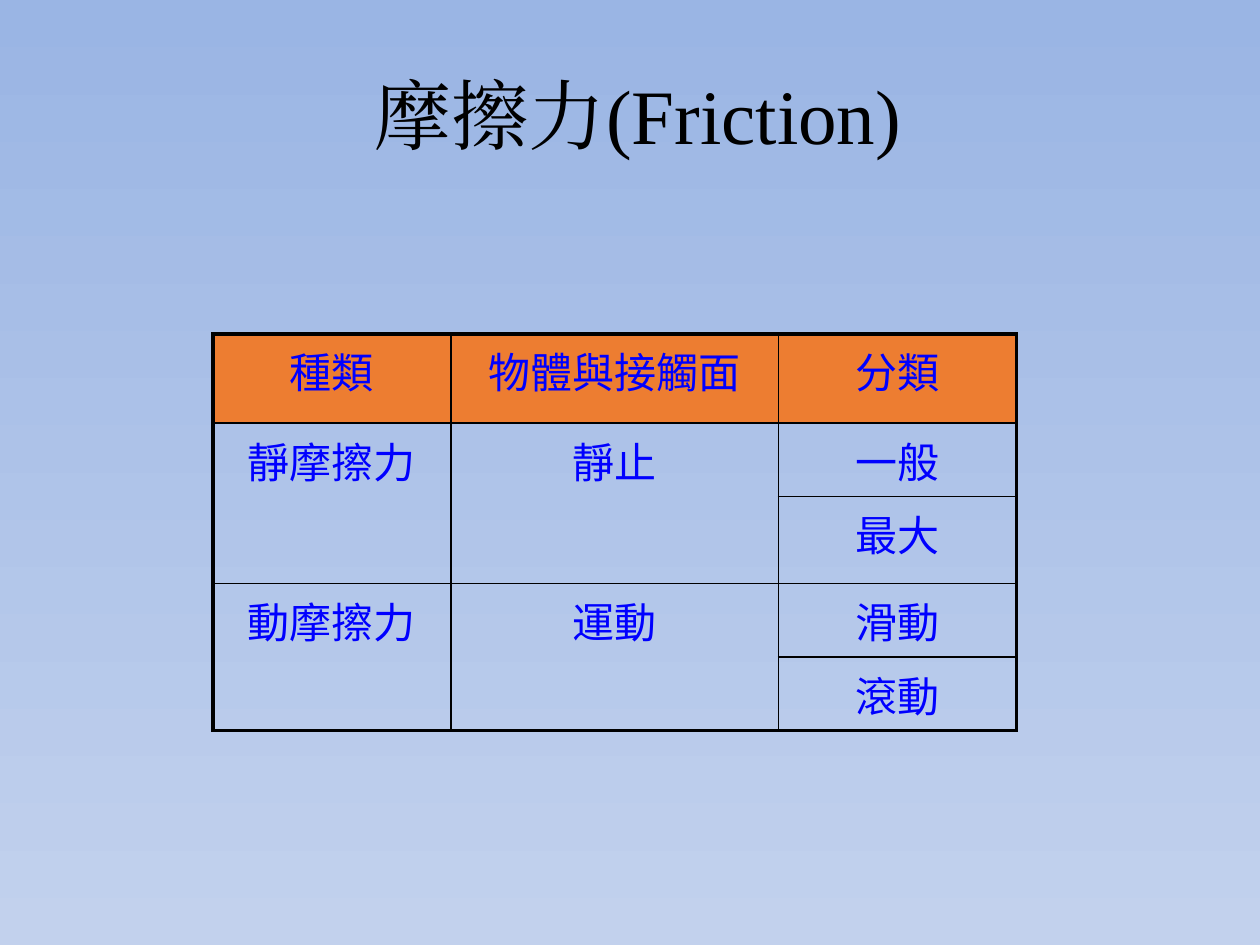
from lxml.etree import SubElement
from pptx import Presentation
from pptx.dml.color import RGBColor as RGB
from pptx.enum.text import MSO_ANCHOR as Anchor, PP_ALIGN as Align
from pptx.oxml import parse_xml
from pptx.oxml.ns import nsdecls, qn
from pptx.util import Cm, Pt

# Content: None continues the cell above
TITLE = "摩擦力(Friction) "
ROWS = [
    ("種類", "物體與接觸面", "分類"),
    ("靜摩擦力", "靜止", "一般"),
    (None, None, "最大"),
    ("動摩擦力", "運動", "滑動"),
    (None, None, "滾動"),
]

# Layout in cm
TITLE_BOX = {"left": 2.9, "top": 0.71, "width": 20.32, "height": 3.18}
TABLE_BOX = (4.29, 6.73, 16.2, 7.67)
COLUMN_WIDTHS = (4.8, 6.6, 4.8)
ROW_HEIGHTS = (1.8, 1.27, 1.75, 1.47, 1.37)

COLORS = {"sky": "9AB5E4", "haze": "C2D1ED", "title": "000000",
          "header": "ED7D31", "text": "0000FF", "rule": "000000"}
TITLE_FONT = {"name": "Times New Roman", "size": Pt(44), "bold": False}
CELL_FONT = {"name": "Noto Sans CJK SC", "size": Pt(24), "bold": False}
OUTER_RULE, INNER_RULE = Pt(2.25), Pt(1)


def write(frame, words, font_values, color):
    paragraph = frame.paragraphs[0]
    paragraph.alignment = Align.CENTER
    run = paragraph.add_run()
    run.text = words
    for key, value in font_values.items():
        setattr(run.font, key, value)
    run.font.color.rgb = RGB.from_string(COLORS[color])
    SubElement(run.font._element, qn("a:ea"), typeface=font_values["name"])


def add_borders(cell, outer_sides):
    properties = cell._tc.get_or_add_tcPr()
    for position, side in enumerate("LRTB"):
        width = OUTER_RULE if side in outer_sides else INNER_RULE
        properties.insert(position, parse_xml(
            f'<a:ln{side} {nsdecls("a")} w="{width}"><a:solidFill>'
            f'<a:srgbClr val="{COLORS["rule"]}"/></a:solidFill></a:ln{side}>'))


def add_friction_table(slide):
    last_row, last_column = len(ROWS) - 1, len(COLUMN_WIDTHS) - 1
    table = slide.shapes.add_table(
        len(ROWS), len(COLUMN_WIDTHS), *map(Cm, TABLE_BOX)).table
    table.first_row = table.horz_banding = False
    for column, width in zip(table.columns, COLUMN_WIDTHS):
        column.width = Cm(width)
    for row, height in zip(table.rows, ROW_HEIGHTS):
        row.height = Cm(height)

    for r, labels in enumerate(ROWS):
        for c, label in enumerate(labels):
            cell = table.cell(r, c)
            if r == 0:
                cell.fill.solid()
                cell.fill.fore_color.rgb = RGB.from_string(COLORS["header"])
            else:
                cell.fill.background()
            edges = {"L": c == 0, "R": c == last_column,
                     "T": r == 0, "B": r == last_row}
            # A merged cell takes the bottom edge of its last row
            if r + 1 == last_row and ROWS[last_row][c] is None:
                edges["B"] = True
            add_borders(cell, [side for side, outer in edges.items() if outer])
            if label is None:
                table.cell(r - 1, c).merge(cell)
            else:
                write(cell.text_frame, label, CELL_FONT, "text")


def main():
    deck = Presentation()
    deck.slide_width, deck.slide_height = Cm(25.4), Cm(19.05)
    slide = deck.slides.add_slide(deck.slide_layouts[5])

    # Background, top to bottom
    backdrop = slide.background.fill
    backdrop.gradient()
    backdrop.gradient_angle = 270
    for stop, position, color in zip(
            backdrop.gradient_stops, (0, 1), ("sky", "haze")):
        stop.position = position
        stop.color.rgb = RGB.from_string(COLORS[color])

    # Title
    title = slide.shapes.title
    for key, value in TITLE_BOX.items():
        setattr(title, key, Cm(value))
    title.text_frame.vertical_anchor = Anchor.MIDDLE
    write(title.text_frame, TITLE, TITLE_FONT, "title")

    add_friction_table(slide)
    deck.save("out.pptx")


if __name__ == "__main__":
    main()
